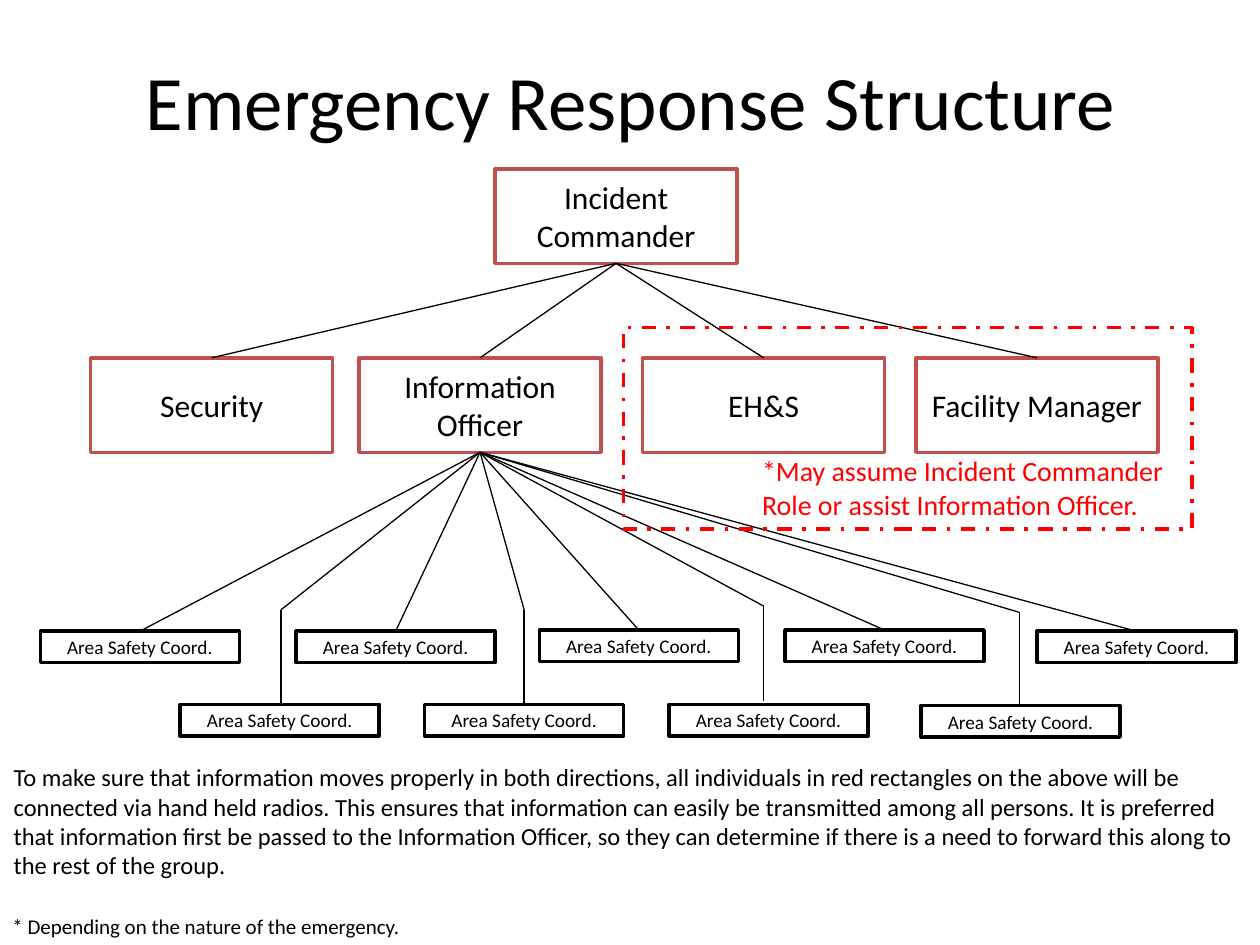
from dataclasses import dataclass

from lxml import etree
from pptx import Presentation
from pptx.dml.color import RGBColor
from pptx.enum.dml import MSO_LINE
from pptx.enum.shapes import MSO_CONNECTOR, MSO_SHAPE
from pptx.enum.text import MSO_ANCHOR, PP_ALIGN
from pptx.oxml.ns import qn
from pptx.util import Inches, Pt

STRAIGHT = MSO_CONNECTOR.STRAIGHT
RECTANGLE = MSO_SHAPE.RECTANGLE
DASH_DOT = MSO_LINE.DASH_DOT
MIDDLE, TOP = MSO_ANCHOR.MIDDLE, MSO_ANCHOR.TOP
CENTER, LEFT = PP_ALIGN.CENTER, PP_ALIGN.LEFT

BLACK = RGBColor(0, 0, 0)
WHITE = RGBColor(255, 255, 255)
RED = RGBColor(255, 0, 0)
BRICK = RGBColor(0xC0, 0x50, 0x4D)
FONT = "Calibri"

# The slide is a grid of 100 columns by 75 rows.
SLIDE_WIDTH, SLIDE_HEIGHT = Inches(10), Inches(7.5)
COLUMN, ROW = SLIDE_WIDTH / 100, SLIDE_HEIGHT / 75

TITLE = "Emergency Response Structure"
COORDINATOR = "Area Safety Coord."
ROLE_NOTE = "*May assume Incident Commander Role or assist Information Officer."
RADIO_NOTE = (
    "To make sure that information moves properly in both directions, all "
    "individuals in red rectangles on the above will be connected via hand held "
    "radios. This ensures that information can easily be transmitted among all "
    "persons. It is preferred that information first be passed to the Information "
    "Officer, so they can determine if there is a need to forward this along to "
    "the rest of the group."
)
FOOTNOTE = "* Depending on the nature of the emergency."


@dataclass(frozen=True)
class Point:
    column: float
    row: float


@dataclass(frozen=True)
class Area:
    left: float
    top: float
    width: float
    height: float

    @property
    def top_center(self) -> Point:
        return Point(self.left + self.width / 2, self.top)

    @property
    def bottom_center(self) -> Point:
        return Point(self.left + self.width / 2, self.top + self.height)

    def lengths(self) -> tuple[int, int, int, int]:
        return (round(self.left * COLUMN), round(self.top * ROW),
                round(self.width * COLUMN), round(self.height * ROW))


def role_area(left: float, top: float) -> Area:
    return Area(left, top, 19.2, 7.5)


def coordinator_area(left: float, top: float) -> Area:
    return Area(left, top, 15.8, 2.5)


COMMANDER = role_area(39.3, 13.4)
INFORMATION_OFFICER = role_area(28.5, 28.4)
ROLES = {
    "Incident Commander": COMMANDER,
    "Security": role_area(7.2, 28.4),
    "Information Officer": INFORMATION_OFFICER,
    "Facility Manager": role_area(72.7, 28.4),
    "EH&S": role_area(51, 28.4),
}
UPPER_COORDINATORS = [
    coordinator_area(left, top)
    for left, top in [(3.2, 50.1), (23.5, 50.1), (42.8, 50), (62.3, 50), (82.3, 50.1)]
]
LOWER_COORDINATORS = [
    coordinator_area(left, top)
    for left, top in [(14.3, 55.9), (33.7, 55.9), (53.1, 55.9), (73.1, 56)]
]
LINE_BENDS = [Point(22.3, 48.4), Point(41.6, 48.4), Point(60.6, 48.1), Point(80.9, 48.6)]
BEND_DROP = 7.5


def write_text(shape, text: str, *, size: float, color: RGBColor = BLACK,
               align=LEFT, anchor=TOP) -> None:
    frame = shape.text_frame
    frame.word_wrap = True
    frame.vertical_anchor = anchor
    paragraph = frame.paragraphs[0]
    paragraph.alignment = align
    run = paragraph.add_run()
    run.text = text
    run.font.name = FONT
    run.font.size = Pt(size)
    run.font.color.rgb = color


def add_rectangle(slide, area: Area, line_color: RGBColor):
    shape = slide.shapes.add_shape(RECTANGLE, *area.lengths())
    shape.shadow.inherit = False
    shape.line.color.rgb = line_color
    shape.line.width = Pt(2)
    return shape


def add_box(slide, area: Area, text: str, *, line_color: RGBColor, size: float) -> None:
    shape = add_rectangle(slide, area, line_color)
    shape.fill.solid()
    shape.fill.fore_color.rgb = WHITE
    write_text(shape, text, size=size, align=CENTER, anchor=MIDDLE)


def add_line(slide, start: Point, end: Point) -> None:
    connector = slide.shapes.add_connector(
        STRAIGHT, round(start.column * COLUMN), round(start.row * ROW),
        round(end.column * COLUMN), round(end.row * ROW))
    connector.line.color.rgb = BLACK
    connector.line.width = Pt(0.75)
    etree.SubElement(connector._element.spPr, qn("a:effectLst"))


def add_note(slide, area: Area, text: str, *, size: float, color: RGBColor = BLACK) -> None:
    write_text(slide.shapes.add_textbox(*area.lengths()), text, size=size, color=color)


def add_title(slide) -> None:
    title = slide.shapes.title
    title.left, title.top, title.width, title.height = Area(5.1, 1.7, 90, 12.5).lengths()
    write_text(title, TITLE, size=44, align=CENTER, anchor=MIDDLE)


def add_lines(slide) -> None:
    for role in ROLES.values():
        if role != COMMANDER:
            add_line(slide, COMMANDER.bottom_center, role.top_center)
    hub = INFORMATION_OFFICER.bottom_center
    for area in UPPER_COORDINATORS:
        add_line(slide, hub, area.top_center)
    for bend in LINE_BENDS:
        add_line(slide, hub, bend)
        add_line(slide, bend, Point(bend.column, bend.row + BEND_DROP))


def main() -> None:
    presentation = Presentation()
    presentation.slide_width, presentation.slide_height = SLIDE_WIDTH, SLIDE_HEIGHT
    slide = presentation.slides.add_slide(presentation.slide_layouts.get_by_name("Title Only"))

    add_title(slide)
    for name, area in ROLES.items():
        add_box(slide, area, name, line_color=BRICK, size=18)
    for area in UPPER_COORDINATORS + LOWER_COORDINATORS:
        add_box(slide, area, COORDINATOR, line_color=BLACK, size=11)
    add_lines(slide)

    group_frame = add_rectangle(slide, Area(49.5, 26, 45.1, 16), RED)
    group_frame.fill.background()
    group_frame.line.dash_style = DASH_DOT

    add_note(slide, Area(59.5, 35.5, 35.1, 6.4), ROLE_NOTE, size=16, color=RED)
    add_note(slide, Area(0, 72, 100, 3), FOOTNOTE, size=12)
    add_note(slide, Area(0.1, 60, 100, 10.4), RADIO_NOTE, size=14)
    presentation.save("out.pptx")


if __name__ == "__main__":
    main()
